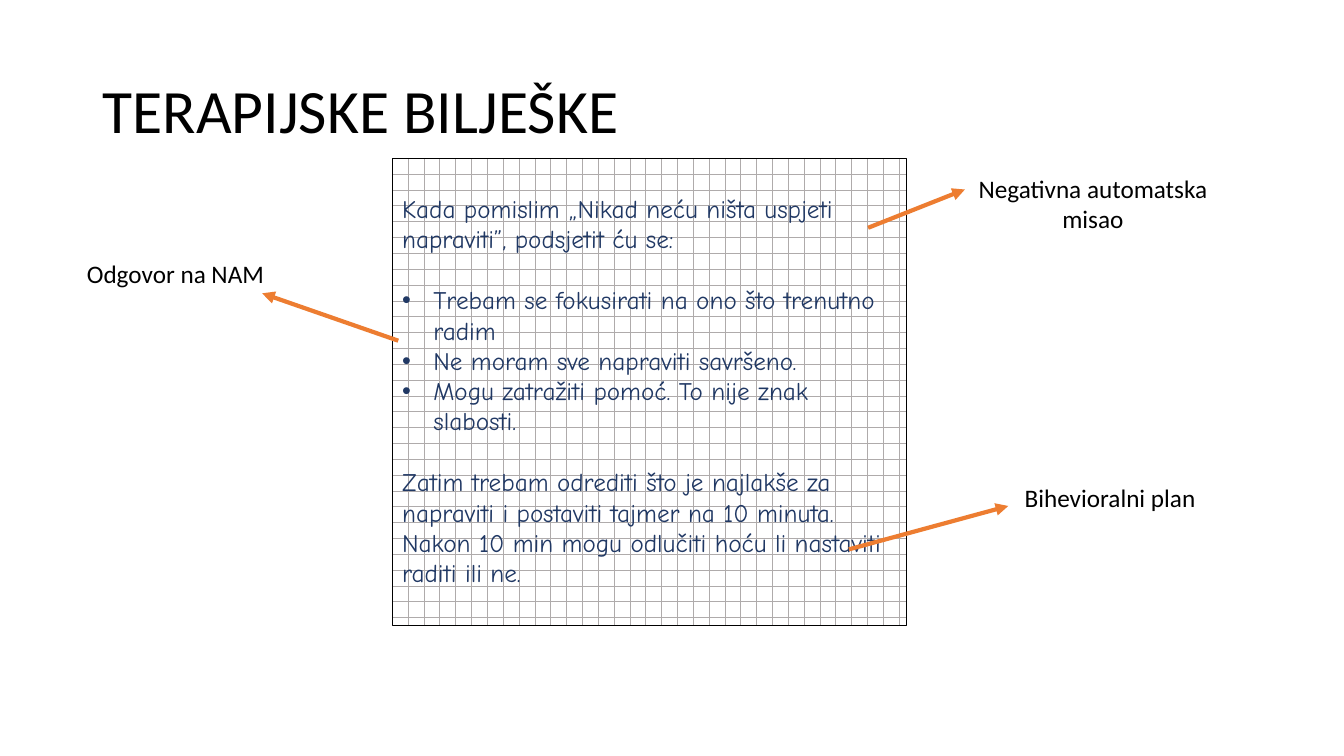
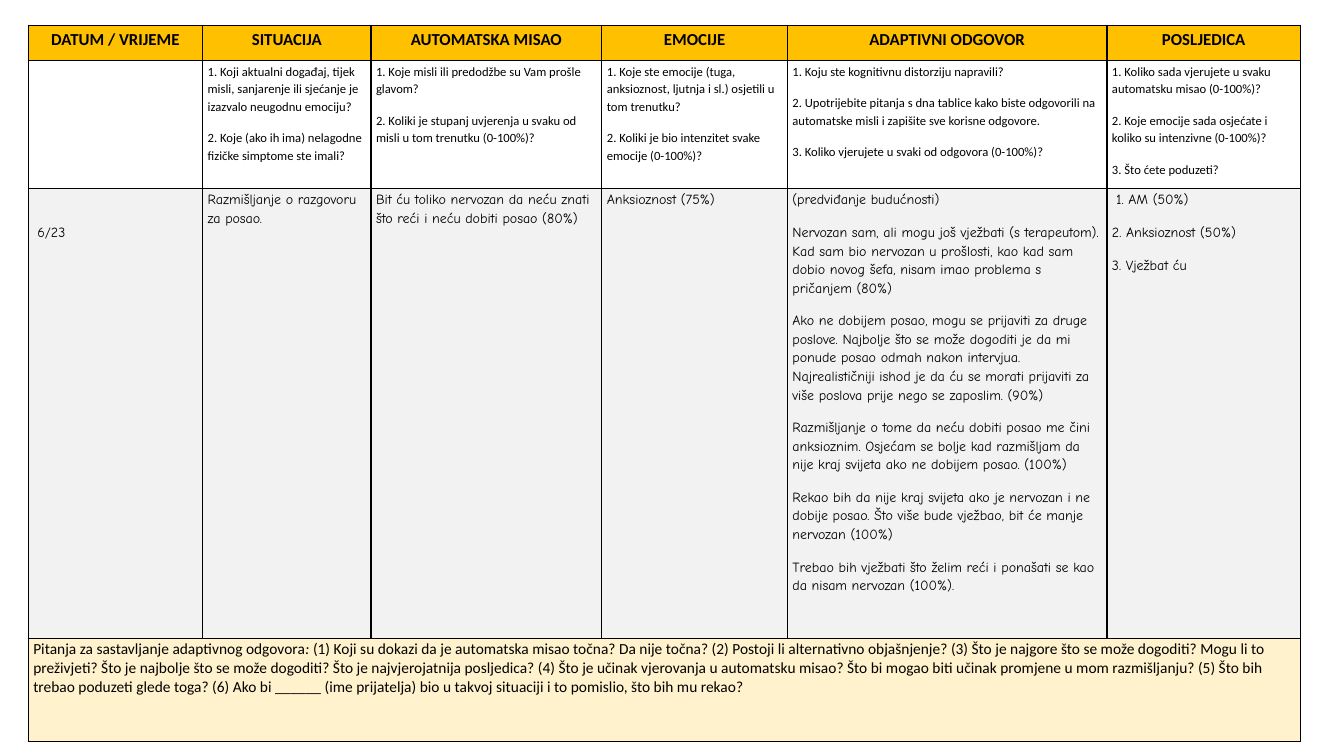
from dataclasses import dataclass
from typing import Any

import lxml.etree
import pptx
import pptx.dml.color
import pptx.enum.dml
import pptx.enum.shapes
import pptx.enum.text
import pptx.oxml.ns
import pptx.util

RGB = pptx.dml.color.RGBColor
BLACK = RGB(0x00, 0x00, 0x00)
WHITE = RGB(0xFF, 0xFF, 0xFF)
GREY = RGB(0xAF, 0xAB, 0xAB)
NAVY = RGB(0x20, 0x38, 0x64)
RUST = RGB(0xED, 0x7D, 0x31)
GOLD = RGB(0xFF, 0xC0, 0x00)
CREAM = RGB(0xFF, 0xF2, 0xCC)
PALE = RGB(0xF2, 0xF2, 0xF2)

ALIGN = pptx.enum.text.PP_ALIGN
ANCHOR = pptx.enum.text.MSO_ANCHOR
FIT = pptx.enum.text.MSO_AUTO_SIZE
SANS = "Calibri"
HAND = "Comic Neue"
SCALE = 9144


@dataclass(frozen=True)
class Par:
    text: str
    left: int = 0
    before: int = 0
    bullet: bool = False
    more: tuple[tuple[str, bool], ...] = ()


@dataclass(frozen=True)
class Look:
    size: int
    name: str = SANS
    color: RGB = BLACK
    bold: bool = False
    align: Any = ALIGN.LEFT
    line: float = 1.0
    after: int = 0


@dataclass(frozen=True)
class Label:
    text: str
    box: tuple[int, int, int, int]


@dataclass(frozen=True)
class Arrow:
    start: tuple[int, int]
    end: tuple[int, int]


@dataclass(frozen=True)
class Row:
    high: int
    look: Look
    fill: RGB | None
    cells: tuple[tuple[Par, ...], ...]
    anchor: Any = ANCHOR.TOP


TITLE = Look(44, line=0.9)
NOTE = Look(18, HAND, NAVY)
LABEL = Look(18, align=ALIGN.CENTER)
HEAD = Look(12, bold=True, align=ALIGN.CENTER, line=1.15, after=10)
ASK = Look(9, line=1.15, after=10)
REPLY = Look(10, HAND, line=1.15, after=10)
FOOT = Look(11)

NOTES = (
    Par("Kada pomislim „Nikad neću ništa uspjeti napraviti”, podsjetit ću se:"),
    Par("Trebam se fokusirati na ono što trenutno radim", 31, 22, True),
    Par("Ne moram sve napraviti savršeno.", 31, 0, True),
    Par("Mogu zatražiti pomoć. To nije znak slabosti.", 31, 0, True),
    Par("Zatim trebam odrediti što je najlakše za napraviti i postaviti tajmer na 10 minuta. "
        "Nakon 10 min mogu odlučiti hoću li nastaviti raditi ili ne.", before=22),
)
LABELS = (
    Label("Negativna automatska misao", (944, 167, 280, 71)),
    Label("Odgovor na NAM", (34, 251, 280, 40)),
    Label("Bihevioralni plan", (961, 474, 280, 40)),
)
ARROWS = (
    Arrow((861, 226), (957, 188)),
    Arrow((395, 338), (260, 291)),
    Arrow((842, 545), (1000, 502)),
)
COLS = (173, 167, 229, 184, 317, 192)
HEADS = ("DATUM / VRIJEME", "SITUACIJA", "AUTOMATSKA MISAO", "EMOCIJE",
         "ADAPTIVNI ODGOVOR", "POSLJEDICA")
ASKS = (
    (),
    (Par("1. Koji aktualni događaj, tijek misli, sanjarenje ili sjećanje je izazvalo "
         "neugodnu emociju?"),
     Par("2. Koje (ako ih ima) nelagodne fizičke simptome ste imali?")),
    (Par("1. Koje misli ili predodžbe su Vam prošle glavom?"),
     Par("2. Koliki je stupanj uvjerenja u svaku od misli u tom trenutku (0-100%)?")),
    (Par("1. Koje ste emocije (tuga, anksioznost, ljutnja i sl.) osjetili u tom trenutku?"),
     Par("2. Koliki je bio intenzitet svake emocije (0-100%)?")),
    (Par("1. Koju ste kognitivnu distorziju napravili?"),
     Par("2. Upotrijebite pitanja s dna tablice kako biste odgovorili na automatske misli "
         "i zapišite sve korisne odgovore."),
     Par("3. Koliko vjerujete u svaki od odgovora (0-100%)?")),
    (Par("1. Koliko sada vjerujete u svaku automatsku misao (0-100%)?"),
     Par("2. Koje emocije sada osjećate i koliko su intenzivne (0-100%)?"),
     Par("3. Što ćete poduzeti?")),
)
REPLIES = (
    (Par("6/23", 4),),
    (Par("Razmišljanje o razgovoru za posao."),),
    (Par("Bit ću toliko nervozan da neću znati što reći i neću dobiti posao (80%)"),),
    (Par("Anksioznost (75%)"),),
    (Par("(predviđanje budućnosti)"),
     Par("Nervozan sam, ali mogu još vježbati (s terapeutom). Kad sam bio nervozan u "
         "prošlosti, kao kad sam dobio novog šefa, nisam imao problema s pričanjem (80%)"),
     Par("Ako ne dobijem posao, mogu se prijaviti za druge poslove. Najbolje što se može "
         "dogoditi je da mi ponude posao odmah nakon intervjua. Najrealističniji ishod je "
         "da ću se morati prijaviti za više poslova prije nego se zaposlim. (90%)"),
     Par("Razmišljanje o tome da neću dobiti posao me čini anksioznim. Osjećam se bolje "
         "kad razmišljam da nije kraj svijeta ako ne dobijem posao. (100%)"),
     Par("Rekao bih da nije kraj svijeta ako je nervozan i ne dobije posao. Što više bude "
         "vježbao, bit će manje nervozan (100%)"),
     Par("Trebao bih vježbati što želim reći i ponašati se kao da nisam nervozan (100%).")),
    (Par("1. AM (50%)", 4), Par("2. Anksioznost (50%)"), Par("3. Vježbat ću")),
)
GUIDE = Par("Pitanja za sastavljanje adaptivnog odgovora", more=(
    (":", True),
    (" (1) Koji su dokazi da je automatska misao točna? Da nije točna? (2) Postoji li "
     "alternativno objašnjenje? (3) Što je najgore što se može dogoditi? Mogu li to "
     "preživjeti? Što je najbolje što se može dogoditi? Što je najvjerojatnija posljedica? "
     "(4) Što je učinak vjerovanja u automatsku misao? Što bi mogao biti učinak promjene u "
     "mom razmišljanju? (5) Što bih trebao poduzeti glede toga? (6) Ako bi ______ (ime "
     "prijatelja) bio u takvoj situaciji i to pomislio, što bih mu rekao?", False),
))
ROWS = (
    Row(34, HEAD, GOLD, tuple((Par(head),) for head in HEADS), ANCHOR.BOTTOM),
    Row(121, ASK, None, ASKS),
    Row(446, REPLY, PALE, REPLIES),
    Row(102, FOOT, CREAM, ((GUIDE,),)),
)


def px(size: int) -> pptx.util.Emu:
    return pptx.util.Emu(size * SCALE)


def spots(*sizes: int) -> list[pptx.util.Emu]:
    return [px(size) for size in sizes]


def apply(item: Any, vals: dict[str, Any]) -> None:
    for key, val in vals.items():
        setattr(item, key, val)


def child(node: Any, tag: str, **vals: str) -> Any:
    return lxml.etree.SubElement(node, pptx.oxml.ns.qn(tag), vals)


def write(frame: Any, pars: tuple[Par, ...], look: Look) -> None:
    for pos, par in enumerate(pars):
        line = frame.add_paragraph() if pos else frame.paragraphs[0]
        props = line._p.get_or_add_pPr()
        if par.left:
            props.set("marL", str(px(par.left)))
        if par.bullet:
            props.set("indent", str(-px(par.left)))
            child(props, "a:buFont", typeface="Arial")
            child(props, "a:buChar", char="•")
        apply(line, {"alignment": look.align, "line_spacing": look.line,
                     "space_before": pptx.util.Pt(par.before),
                     "space_after": pptx.util.Pt(look.after)})
        for text, ital in ((par.text, False), *par.more):
            run = line.add_run()
            run.text = text
            apply(run.font, {"size": pptx.util.Pt(look.size), "name": look.name,
                             "bold": look.bold, "italic": ital})
            run.font.color.rgb = look.color


def title(slide: Any, text: str) -> None:
    head = slide.shapes.title
    left, top, wide, high = spots(92, 40, 1150, 145)
    apply(head, {"left": left, "top": top, "width": wide, "height": high})
    apply(head.text_frame, {"vertical_anchor": ANCHOR.MIDDLE, "word_wrap": True,
                            "auto_size": FIT.NONE})
    write(head.text_frame, (Par(text),), TITLE)


def card(slide: Any) -> None:
    kind = pptx.enum.shapes.MSO_SHAPE.RECTANGLE
    shape = slide.shapes.add_shape(kind, *spots(389, 157, 510, 464))
    shape.shadow.inherit = False
    shape.fill.patterned()
    shape.fill.pattern = pptx.enum.dml.MSO_PATTERN.DOTTED_GRID
    shape.fill.fore_color.rgb = GREY
    shape.fill.back_color.rgb = WHITE
    shape.line.color.rgb = BLACK
    shape.line.width = pptx.util.Pt(0.75)
    apply(shape.text_frame, {"vertical_anchor": ANCHOR.TOP, "word_wrap": True,
                             "margin_top": px(35)})
    write(shape.text_frame, NOTES, NOTE)


def label(slide: Any, item: Label) -> None:
    frame = slide.shapes.add_textbox(*spots(*item.box)).text_frame
    frame.word_wrap = True
    write(frame, (Par(item.text),), LABEL)


def arrow(slide: Any, item: Arrow) -> None:
    kind = pptx.enum.shapes.MSO_CONNECTOR.STRAIGHT
    line = slide.shapes.add_connector(kind, *spots(*item.start, *item.end))
    line.line.color.rgb = RUST
    line.line.width = pptx.util.Pt(3)
    props = line._element.spPr
    child(props.find(pptx.oxml.ns.qn("a:ln")), "a:tailEnd", type="triangle")
    child(props, "a:effectLst")


def border(cell: Any) -> None:
    props = cell._tc.get_or_add_tcPr()
    for side in ("a:lnL", "a:lnR", "a:lnT", "a:lnB"):
        edge = child(props, side, w=str(pptx.util.Pt(1)))
        child(child(edge, "a:solidFill"), "a:srgbClr", val=str(BLACK))


def grid(slide: Any) -> None:
    size = spots(28, 25, sum(COLS), sum(row.high for row in ROWS))
    table = slide.shapes.add_table(len(ROWS), len(COLS), *size).table
    apply(table, {"first_row": False, "horz_banding": False})
    for col, wide in zip(table.columns, COLS):
        col.width = px(wide)
    for num, row in enumerate(ROWS):
        table.rows[num].height = px(row.high)
        for cell in table.rows[num].cells:
            border(cell)
            if row.fill is None:
                cell.fill.background()
            else:
                cell.fill.solid()
                cell.fill.fore_color.rgb = row.fill
            apply(cell, {"margin_left": px(5), "margin_right": px(5), "margin_top": px(1),
                         "margin_bottom": px(11), "vertical_anchor": row.anchor})
        for col, pars in enumerate(row.cells):
            write(table.cell(num, col).text_frame, pars, row.look)
    table.cell(2, 0).margin_top = px(33)
    last = len(ROWS) - 1
    table.cell(last, 0).merge(table.cell(last, len(COLS) - 1))


def main() -> None:
    deck = pptx.Presentation()
    apply(deck, {"slide_width": px(1333), "slide_height": px(750)})
    notes = deck.slides.add_slide(deck.slide_layouts[5])
    title(notes, "TERAPIJSKE BILJEŠKE")
    card(notes)
    for item in ARROWS:
        arrow(notes, item)
    for item in LABELS:
        label(notes, item)
    grid(deck.slides.add_slide(deck.slide_layouts[6]))
    deck.save("out.pptx")


if __name__ == "__main__":
    main()
